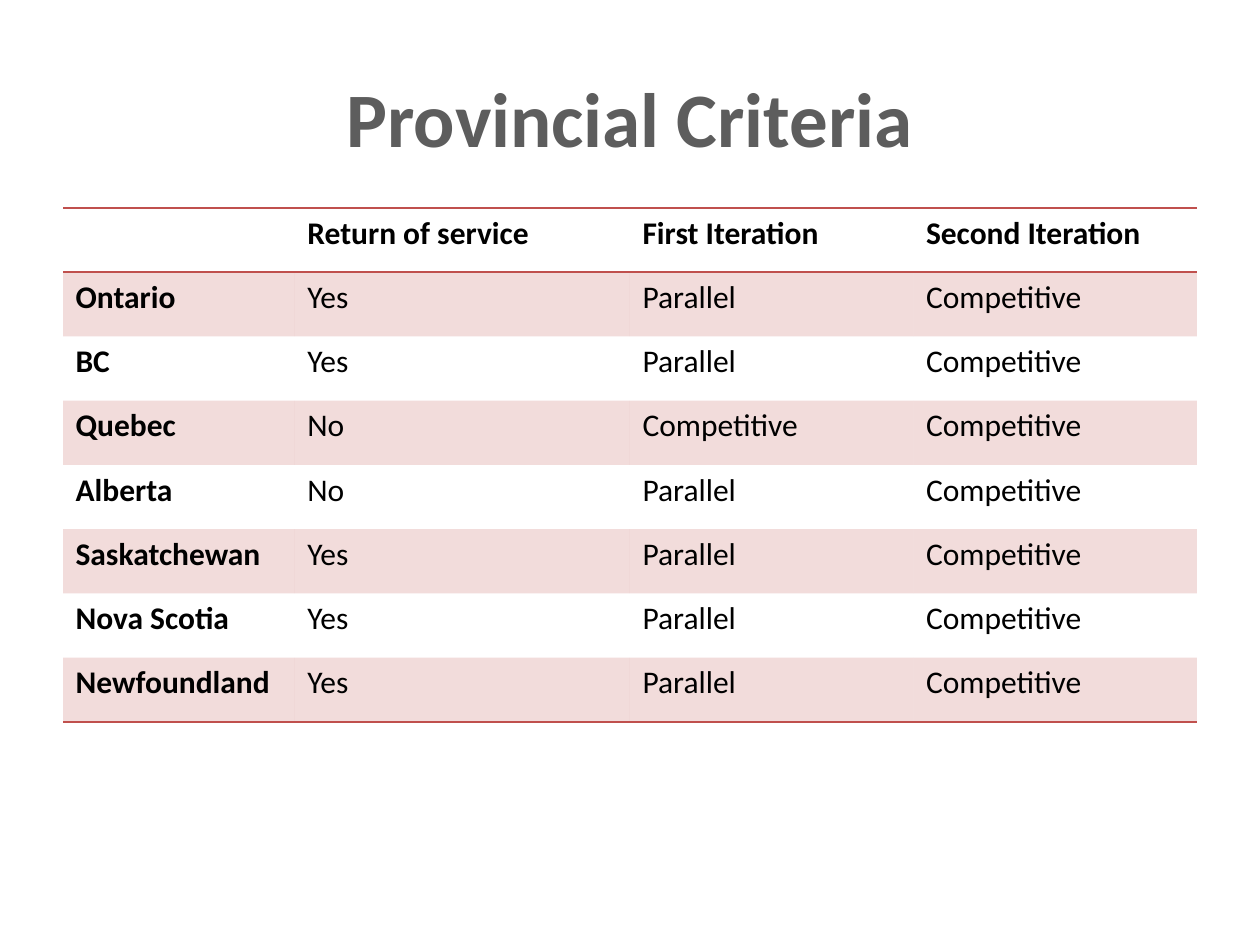
from dataclasses import dataclass

from lxml import etree
from pptx import Presentation
from pptx import util as u
from pptx.dml.color import RGBColor
from pptx.enum import text
from pptx.oxml import ns

FONT = "Calibri"
TITLE_GREY = RGBColor(0x5D, 0x5D, 0x5D)
BLACK = RGBColor(0x00, 0x00, 0x00)
RED = RGBColor(0xC0, 0x50, 0x4D)
BAND_ALPHA = "20000"
PLAIN_TABLE_STYLE = "{2D5ABB26-0587-4C30-8999-92F81FD0307C}"
COLUMN_WIDTHS = (1.84, 2.66, 2.25, 2.25)
ROW_HEIGHT = 0.51


@dataclass(frozen=True)
class Province:
    name: str
    return_of_service: str
    first_iteration: str = "Parallel"
    second_iteration: str = "Competitive"

    def cells(self) -> tuple[str, ...]:
        return (self.name, self.return_of_service,
                self.first_iteration, self.second_iteration)


HEADINGS = ("", "Return of service", "First Iteration", "Second Iteration")
PROVINCES = (
    Province("Ontario", "Yes"),
    Province("BC", "Yes"),
    Province("Quebec", "No", "Competitive"),
    Province("Alberta", "No"),
    Province("Saskatchewan", "Yes"),
    Province("Nova Scotia", "Yes"),
    Province("Newfoundland", "Yes"),
)


def add_run(paragraph, words: str, size: int, color: RGBColor, bold: bool) -> None:
    run = paragraph.add_run()
    run.text = words
    run.font.name = FONT
    run.font.size = u.Pt(size)
    run.font.bold = bold
    run.font.color.rgb = color


def add_title(slide, words: str) -> None:
    shape = slide.shapes.add_textbox(u.Inches(0.5), u.Inches(0.3), u.Inches(9), u.Inches(1.25))
    frame = shape.text_frame
    frame.word_wrap = True
    frame.vertical_anchor = text.MSO_ANCHOR.MIDDLE
    paragraph = frame.paragraphs[0]
    paragraph.alignment = text.PP_ALIGN.CENTER
    add_run(paragraph, words, 44, TITLE_GREY, True)


def add_border(cell, side: str) -> None:
    properties = cell._tc.get_or_add_tcPr()
    line = etree.SubElement(properties, ns.qn(f"a:{side}"), w=str(u.Pt(1)))
    fill = etree.SubElement(line, ns.qn("a:solidFill"))
    etree.SubElement(fill, ns.qn("a:srgbClr"), val=str(RED))


def fill_cell(cell, banded: bool) -> None:
    if not banded:
        cell.fill.background()
        return
    cell.fill.solid()
    cell.fill.fore_color.rgb = RED
    color = cell._tc.tcPr.find(f"{ns.qn('a:solidFill')}/{ns.qn('a:srgbClr')}")
    etree.SubElement(color, ns.qn("a:alpha"), val=BAND_ALPHA)


def add_criteria_table(slide) -> None:
    rows = [HEADINGS, *(province.cells() for province in PROVINCES)]
    table = slide.shapes.add_table(
        len(rows), len(HEADINGS), u.Inches(0.5), u.Inches(1.65),
        u.Inches(sum(COLUMN_WIDTHS)), u.Inches(ROW_HEIGHT * len(rows))).table
    table._tbl.tblPr.find(ns.qn("a:tableStyleId")).text = PLAIN_TABLE_STYLE
    for column, width in zip(table.columns, COLUMN_WIDTHS):
        column.width = u.Inches(width)
    for row_index, row in enumerate(rows):
        table.rows[row_index].height = u.Inches(ROW_HEIGHT)
        for column_index, words in enumerate(row):
            cell = table.cell(row_index, column_index)
            if row_index == 0:
                add_border(cell, "lnT")
            if row_index in (0, len(rows) - 1):
                add_border(cell, "lnB")
            fill_cell(cell, row_index % 2 == 1)
            if words:
                bold = row_index == 0 or column_index == 0
                add_run(cell.text_frame.paragraphs[0], words, 18, BLACK, bold)


def main() -> None:
    """Build the provincial criteria slide."""
    presentation = Presentation()
    presentation.slide_width = u.Inches(10)
    presentation.slide_height = u.Inches(7.5)
    slide = presentation.slides.add_slide(presentation.slide_layouts[6])
    add_title(slide, "Provincial Criteria")
    add_criteria_table(slide)
    presentation.save("out.pptx")


if __name__ == "__main__":
    main()
